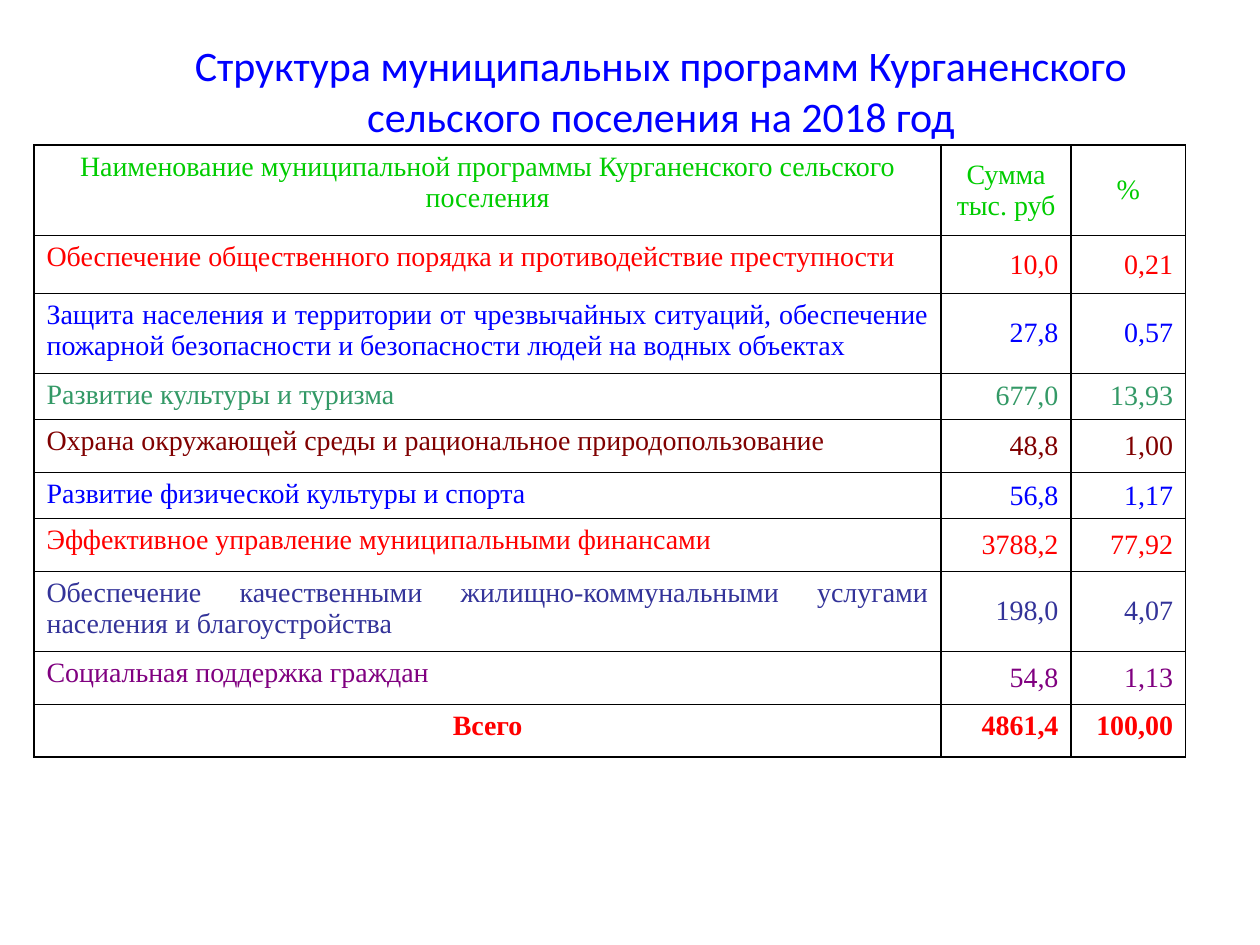
from dataclasses import dataclass

from lxml import etree
from pptx import Presentation
from pptx.dml.color import RGBColor
from pptx.enum.text import MSO_ANCHOR, PP_ALIGN
from pptx.oxml.ns import qn
from pptx.util import Inches, Pt

TOP, MIDDLE = MSO_ANCHOR.TOP, MSO_ANCHOR.MIDDLE
CENTER, RIGHT, JUSTIFY = PP_ALIGN.CENTER, PP_ALIGN.RIGHT, PP_ALIGN.JUSTIFY

BLUE = RGBColor(0x00, 0x00, 0xFF)
LIME = RGBColor(0x00, 0xCC, 0x00)
RED = RGBColor(0xFF, 0x00, 0x00)
GREEN = RGBColor(0x33, 0x99, 0x66)
MAROON = RGBColor(0x80, 0x00, 0x00)
INDIGO = RGBColor(0x33, 0x33, 0x99)
PURPLE = RGBColor(0x80, 0x00, 0x80)
BLACK = RGBColor(0x00, 0x00, 0x00)

COLUMN_WIDTHS = (7.2, 1.03, 0.91)
BORDER_TAGS = ("a:lnL", "a:lnR", "a:lnT", "a:lnB")


@dataclass(frozen=True)
class ProgramRow:
    name: str
    amount: str
    share: str
    color: RGBColor
    height: float
    name_align: PP_ALIGN = JUSTIFY
    value_align: PP_ALIGN = RIGHT
    value_anchor: MSO_ANCHOR = MIDDLE
    bold: bool = False


ROWS = (
    ProgramRow("Наименование муниципальной программы Курганенского сельского поселения",
               "Сумма тыс. руб", "%", LIME, 0.72, name_align=CENTER, value_align=CENTER),
    ProgramRow("Обеспечение общественного порядка и противодействие преступности",
               "10,0", "0,21", RED, 0.46),
    ProgramRow("Защита населения и территории от чрезвычайных ситуаций, обеспечение "
               "пожарной безопасности и безопасности людей на водных объектах",
               "27,8", "0,57", BLUE, 0.55),
    ProgramRow("Развитие культуры и туризма", "677,0", "13,93", GREEN, 0.31),
    ProgramRow("Охрана окружающей среды и рациональное природопользование",
               "48,8", "1,00", MAROON, 0.42),
    ProgramRow("Развитие физической культуры и спорта", "56,8", "1,17", BLUE, 0.2),
    ProgramRow("Эффективное управление муниципальными финансами",
               "3788,2", "77,92", RED, 0.42),
    ProgramRow("Обеспечение качественными жилищно-коммунальными услугами "
               "населения и благоустройства", "198,0", "4,07", INDIGO, 0.58),
    ProgramRow("Социальная поддержка граждан", "54,8", "1,13", PURPLE, 0.42),
    ProgramRow("Всего", "4861,4", "100,00", RED, 0.42,
               name_align=CENTER, value_anchor=TOP, bold=True),
)


def write_text(text_frame, text: str, *, color: RGBColor, align: PP_ALIGN,
               size: float = 16, font_name: str = "Times New Roman",
               bold: bool = False) -> None:
    text_frame.word_wrap = True
    paragraph = text_frame.paragraphs[0]
    paragraph.alignment = align
    run = paragraph.add_run()
    run.text = text
    run.font.name = font_name
    run.font.size = Pt(size)
    run.font.bold = bold
    run.font.color.rgb = color


def set_borders(cell, color: RGBColor, width: float) -> None:
    properties = cell._tc.get_or_add_tcPr()
    for position, tag in enumerate(BORDER_TAGS):
        line = etree.Element(qn(tag), w=str(Pt(width)))
        fill = etree.SubElement(line, qn("a:solidFill"))
        etree.SubElement(fill, qn("a:srgbClr"), val=str(color))
        properties.insert(position, line)


def add_title(slide) -> None:
    title = slide.shapes.add_textbox(Inches(1), Inches(0.28), Inches(8.49), Inches(0.87))
    title.text_frame.vertical_anchor = MIDDLE
    write_text(title.text_frame,
               "Структура муниципальных программ Курганенского сельского поселения на 2018 год",
               color=BLUE, align=CENTER, size=24, font_name="Calibri")


def add_program_table(slide) -> None:
    frame = slide.shapes.add_table(
        len(ROWS), len(COLUMN_WIDTHS), Inches(0.27), Inches(1.15),
        Inches(sum(COLUMN_WIDTHS)), Inches(sum(row.height for row in ROWS)))
    table = frame.table
    table.first_row = False
    table.horz_banding = False
    for column, width in zip(table.columns, COLUMN_WIDTHS):
        column.width = Inches(width)
    for table_row, row in zip(table.rows, ROWS):
        table_row.height = Inches(row.height)
        for index, text in enumerate((row.name, row.amount, row.share)):
            cell = table_row.cells[index]
            cell.fill.background()
            cell.vertical_anchor = row.value_anchor if index else TOP
            set_borders(cell, BLACK, 1)
            write_text(cell.text_frame, text, color=row.color, bold=row.bold,
                       align=row.value_align if index else row.name_align)


def main() -> None:
    presentation = Presentation()
    presentation.slide_width = Inches(10)
    presentation.slide_height = Inches(7.5)
    slide = presentation.slides.add_slide(presentation.slide_layouts[6])
    add_title(slide)
    add_program_table(slide)
    presentation.save("out.pptx")


if __name__ == "__main__":
    main()
